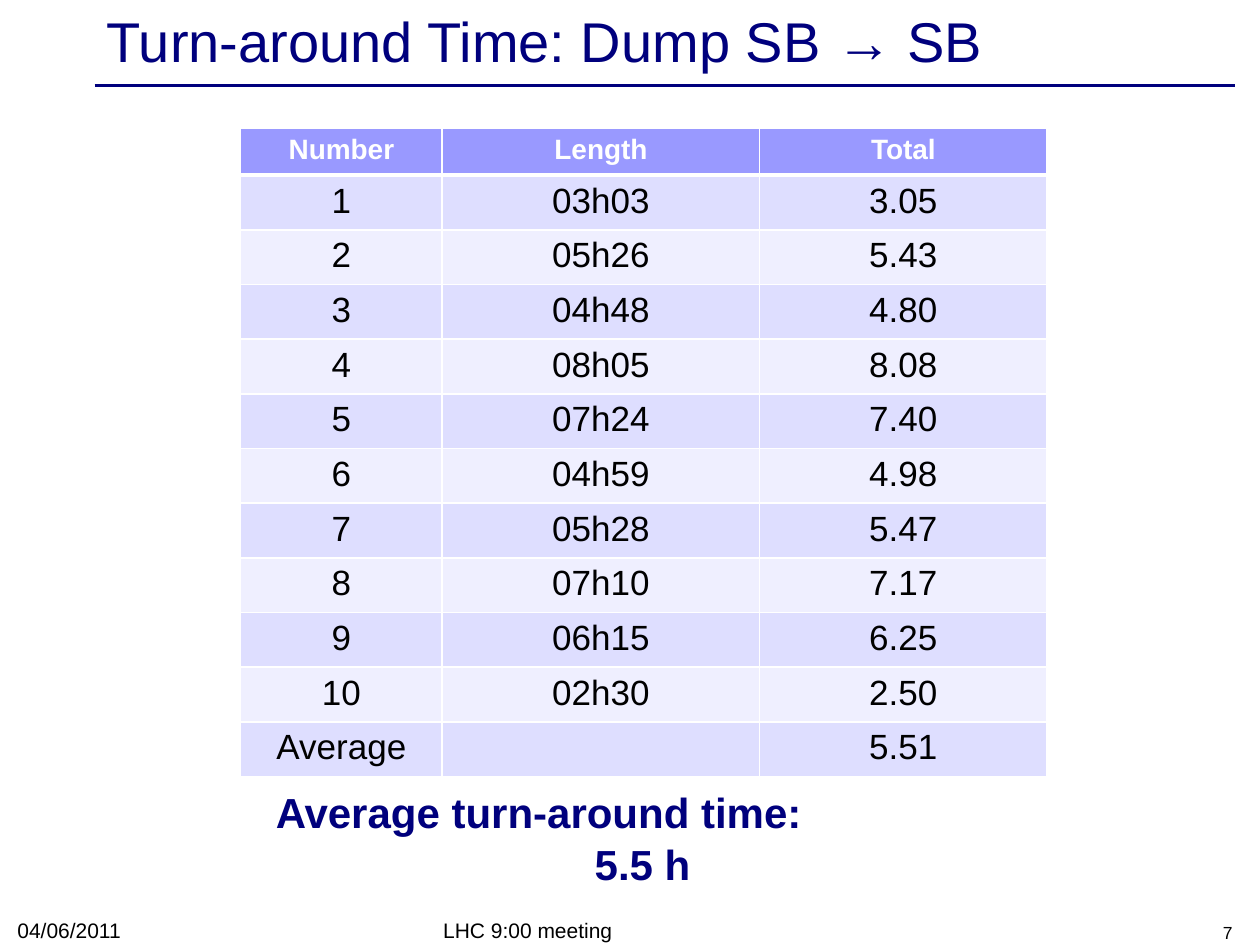
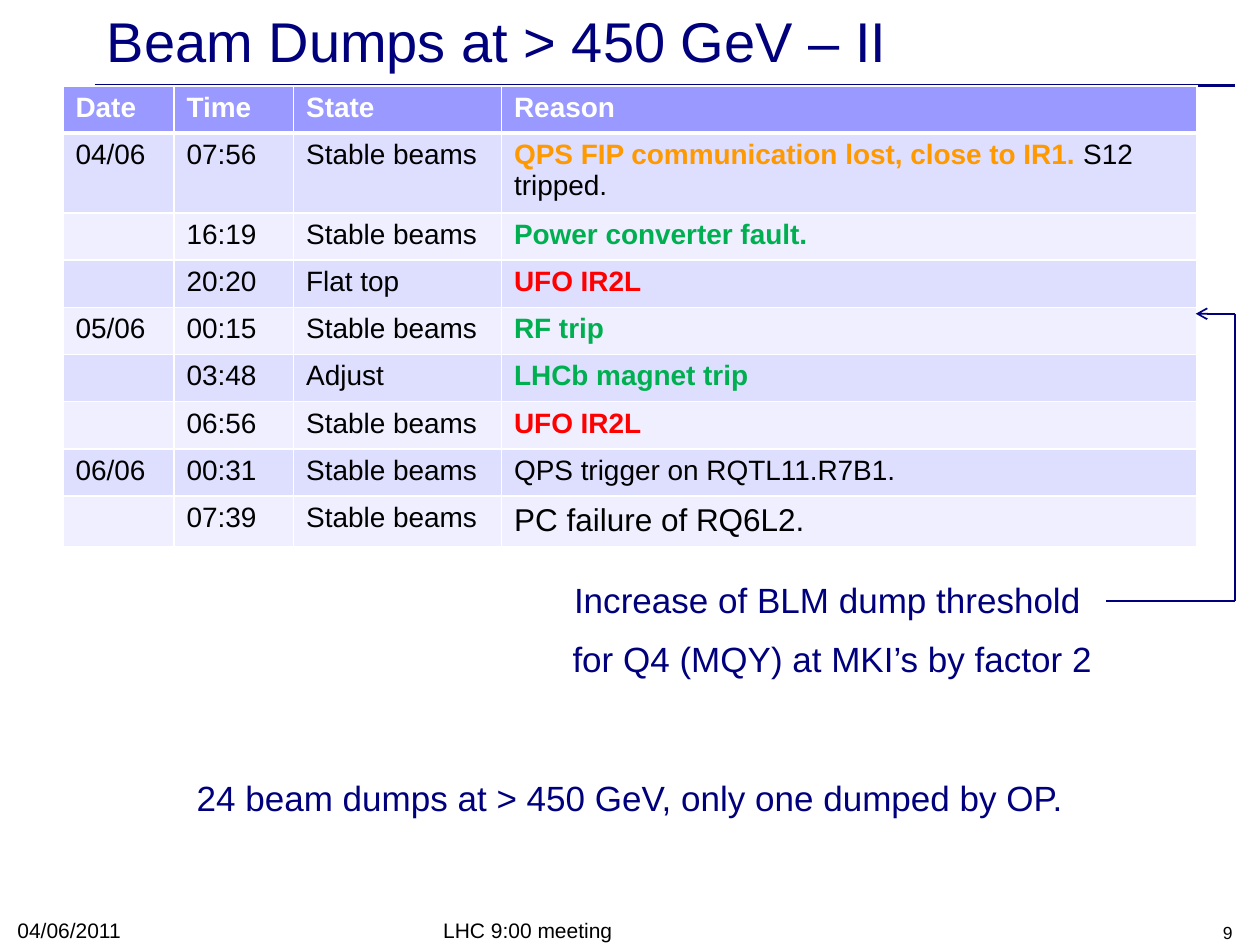
"""Build two beam operation slides: turn-around times and beam dumps."""
from lxml.etree import SubElement
from pptx import Presentation
from pptx.dml.color import RGBColor
from pptx.enum.shapes import MSO_CONNECTOR as Connector
from pptx.enum.text import MSO_ANCHOR as Anchor, PP_ALIGN as Align
from pptx.oxml.ns import qn
from pptx.util import Pt

NAVY = RGBColor(0x00, 0x00, 0x7D)
BLACK = RGBColor(0x00, 0x00, 0x00)
WHITE = RGBColor(0xFF, 0xFF, 0xFF)
ORANGE = RGBColor(0xFF, 0x99, 0x00)
GREEN = RGBColor(0x00, 0xB0, 0x50)
RED = RGBColor(0xFF, 0x00, 0x00)
HEADER_FILL = RGBColor(0x99, 0x99, 0xFF)
BAND_FILLS = [RGBColor(0xEF, 0xEF, 0xFF), RGBColor(0xDE, 0xDE, 0xFF)]
FONT = "Arial"

turnaround_rows = [
    ("Number", "Length", "Total"),
    ("1", "03h03", "3.05"),
    ("2", "05h26", "5.43"),
    ("3", "04h48", "4.80"),
    ("4", "08h05", "8.08"),
    ("5", "07h24", "7.40"),
    ("6", "04h59", "4.98"),
    ("7", "05h28", "5.47"),
    ("8", "07h10", "7.17"),
    ("9", "06h15", "6.25"),
    ("10", "02h30", "2.50"),
    ("Average", "", "5.51"),
]
dump_rows = [
    ("Date", "Time", "State", "Reason"),
    ("04/06", "07:56", "Stable beams", "QPS FIP communication lost, close to IR1. |S12 tripped."),
    ("", "16:19", "Stable beams", "Power converter fault."),
    ("", "20:20", "Flat top", "UFO IR2L"),
    ("05/06", "00:15", "Stable beams", "RF trip"),
    ("", "03:48", "Adjust", "LHCb magnet trip"),
    ("", "06:56", "Stable beams", "UFO IR2L"),
    ("06/06", "00:31", "Stable beams", "QPS trigger on RQTL11.R7B1."),
    ("", "07:39", "Stable beams", "PC failure of RQ6L2."),
]
highlights = {
    "QPS FIP communication lost, close to IR1. ": ORANGE,
    "Power converter fault.": GREEN,
    "RF trip": GREEN,
    "LHCb magnet trip": GREEN,
    "UFO IR2L": RED,
}
special_sizes = {"PC failure of RQ6L2.": 18}

pages = [
    {
        "title": "Turn-around Time: Dump SB → SB", "number": "7",
        "rows": turnaround_rows, "left": 137.5, "top": 73.4,
        "columns": [115.2, 181.4, 164.2], "heights": [26.7] + [29.5] * 11,
        "align": Align.CENTER, "size": 20, "lines": [],
    },
    {
        "title": "Beam Dumps at > 450 GeV – II", "number": "9",
        "rows": dump_rows, "left": 36, "top": 49,
        "columns": [63.4, 68.4, 118.8, 397.4], "heights": [27, 42.8] + [27] * 7,
        "align": Align.LEFT, "size": 16,
        "lines": [(705.6, 179.3, 683.3, 179.3), (705.6, 179.3, 705.6, 343.4),
                  (705.6, 343.4, 632.2, 343.4)],
    },
]


def add_text(slide, box, lines, size, color=BLACK, bold=False, aligns=(Align.LEFT,),
             anchor=Anchor.TOP, wrap=True, gap=0):
    shape = slide.shapes.add_textbox(*map(Pt, box))
    frame = shape.text_frame
    frame.text = "\n".join(lines)
    frame.word_wrap = wrap
    frame.vertical_anchor = anchor
    for index, paragraph in enumerate(frame.paragraphs):
        paragraph.alignment = aligns[index % len(aligns)]
        if index:
            paragraph.space_before = Pt(gap)
        font = paragraph.runs[0].font
        font.name, font.size, font.bold = FONT, Pt(size), bold
        font.color.rgb = color


def add_line(slide, ends, width):
    line = slide.shapes.add_connector(Connector.STRAIGHT, *map(Pt, ends))
    line.line.color.rgb = NAVY
    line.line.width = Pt(width)
    SubElement(line._element.spPr, qn("a:effectLst"))
    return line


presentation = Presentation()
presentation.slide_width = Pt(720)
presentation.slide_height = Pt(540)

for page in pages:
    slide = presentation.slides.add_slide(presentation.slide_layouts[6])
    add_line(slide, (54, 49, 705.6, 49), 2)
    add_text(slide, (54, 2.2, 648, 41), [page["title"]], 32, NAVY, anchor=Anchor.MIDDLE)

    rows, columns = page["rows"], page["columns"]
    table_shape = slide.shapes.add_table(
        len(rows), len(columns), Pt(page["left"]), Pt(page["top"]),
        Pt(sum(columns)), Pt(sum(page["heights"])))
    table = table_shape.table
    for column, width in zip(table.columns, columns):
        column.width = Pt(width)
    for row_index, texts in enumerate(rows):
        table.rows[row_index].height = Pt(page["heights"][row_index])
        header = row_index == 0
        size = 16 if header else page["size"]
        for column_index, text in enumerate(texts):
            cell = table.cell(row_index, column_index)
            properties = cell._tc.get_or_add_tcPr()
            for side in "LRTB":
                thick = (row_index, side) in [(0, "B"), (1, "T")]
                border = SubElement(properties, qn(f"a:ln{side}"), w=str(Pt(3 if thick else 1)))
                border_fill = SubElement(border, qn("a:solidFill"))
                SubElement(border_fill, qn("a:srgbClr"), val=str(WHITE))
            cell.fill.solid()
            cell.fill.fore_color.rgb = HEADER_FILL if header else BAND_FILLS[row_index % 2]
            paragraph = cell.text_frame.paragraphs[0]
            paragraph.alignment = page["align"]
            if not text:
                SubElement(paragraph._p, qn("a:endParaRPr"), sz=str(size * 100))
                continue
            for part in text.split("|"):
                run = paragraph.add_run()
                run.text = part
                run.font.name = FONT
                run.font.size = Pt(special_sizes.get(part, size))
                run.font.bold = header or part in highlights
                run.font.color.rgb = WHITE if header else highlights.get(part, BLACK)

    add_text(slide, (246.2, 522, 228.2, 20.2), ["LHC 9:00 meeting"], 12, anchor=Anchor.BOTTOM)
    add_text(slide, (2.9, 521.3, 167.8, 20.9), ["04/06/2011"], 12, anchor=Anchor.BOTTOM)
    add_text(slide, (543.6, 522, 167.8, 20.2), [page["number"]], 10,
             aligns=(Align.RIGHT,), anchor=Anchor.BOTTOM)

    for index, ends in enumerate(page["lines"]):
        line = add_line(slide, ends, 1)
        if index == 0:
            SubElement(line.line._get_or_add_ln(), qn("a:tailEnd"), type="arrow")

turnaround_slide, dump_slide = presentation.slides
add_text(turnaround_slide, (150.5, 446, 433.4, 64), ["Average turn-around time:", "5.5 h"],
         24, NAVY, bold=True, aligns=(Align.LEFT, Align.CENTER), gap=1)
add_text(dump_slide, (319, 327, 313.2, 67.7),
         ["Increase of BLM dump threshold ", "for Q4 (MQY) at MKI’s by factor 2"],
         20, NAVY, aligns=(Align.CENTER,), wrap=False, gap=10)
add_text(dump_slide, (103.7, 440, 512.6, 31.7),
         ["24 beam dumps at > 450 GeV, only one dumped by OP."],
         20, NAVY, aligns=(Align.CENTER,), wrap=False)

presentation.save("out.pptx")
